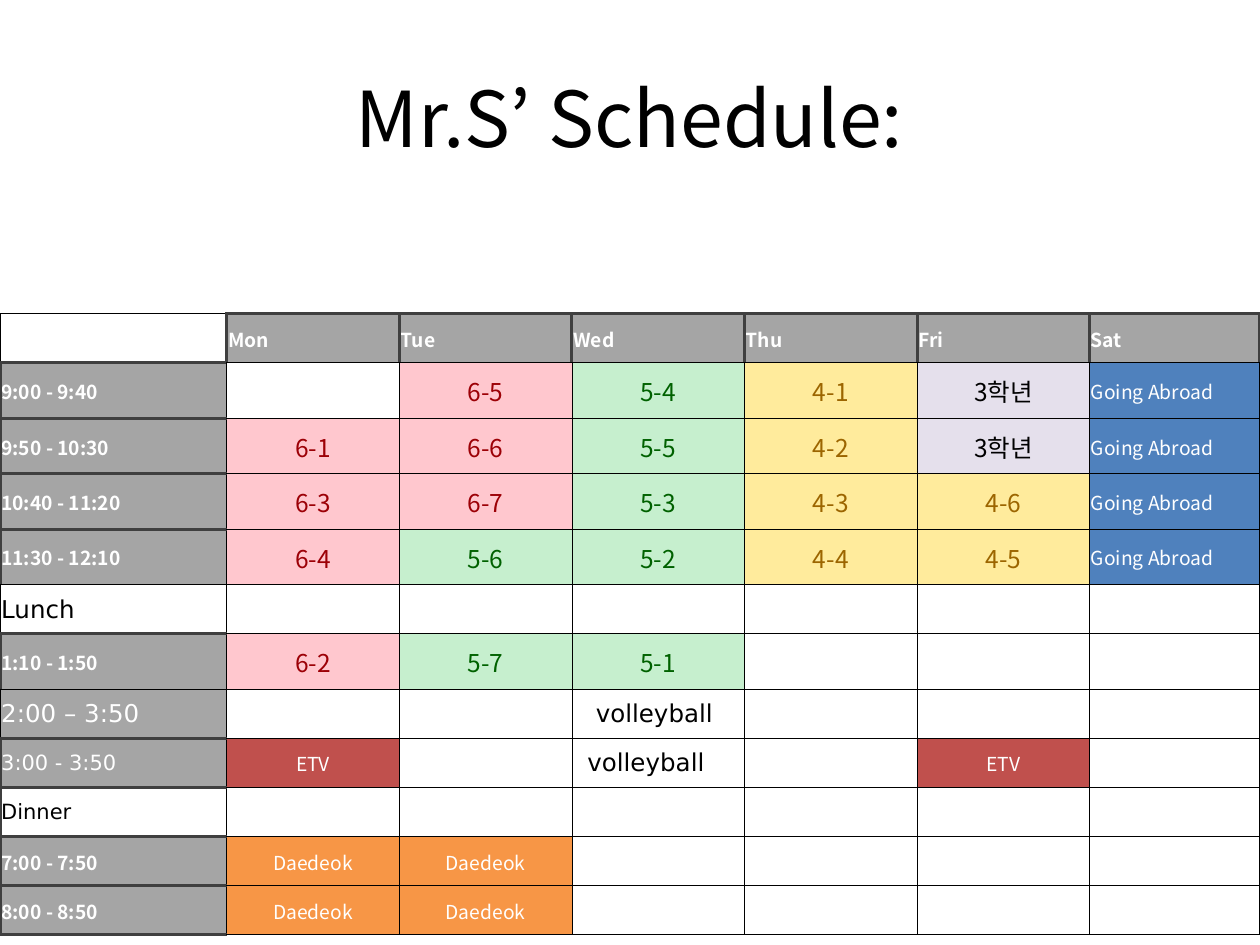
import pptx
import pptx.util
import pptx.dml.color
import pptx.enum.text
import lxml.etree
from pptx.oxml.ns import qn

Inches = pptx.util.Inches
Pt = pptx.util.Pt
RGB = pptx.dml.color.RGBColor
ALIGN = pptx.enum.text.PP_ALIGN
MIDDLE = pptx.enum.text.MSO_ANCHOR.MIDDLE

BLACK = RGB(0x00, 0x00, 0x00)
WHITE = RGB(0xFF, 0xFF, 0xFF)
GRAY = RGB(0xA5, 0xA5, 0xA5)
PALE = RGB(0xA6, 0xA6, 0xA6)
DARK = RGB(0x3F, 0x3F, 0x3F)
PINK = RGB(0xFF, 0xC7, 0xCE)
WINE = RGB(0x9C, 0x00, 0x06)
MINT = RGB(0xC6, 0xEF, 0xCE)
GREEN = RGB(0x00, 0x61, 0x00)
CREAM = RGB(0xFF, 0xEB, 0x9C)
BROWN = RGB(0x9C, 0x65, 0x00)
LILAC = RGB(0xE5, 0xE0, 0xEC)
BLUE = RGB(0x4F, 0x81, 0xBD)
RED = RGB(0xC0, 0x50, 0x4D)
ORANGE = RGB(0xF7, 0x96, 0x46)

NOTO = "Noto Sans CJK KR"
DEJAVU = "DejaVu Sans"

DAYS = ["Mon", "Tue", "Wed", "Thu", "Fri", "Sat"]
WIDTHS = [1.8] + [1.37] * 5 + [1.35]
LOW, HIGH = 0.39, 0.44

TIME = (11, NOTO, WHITE, True, GRAY)
HOURS = [
    ("9:00 - 9:40", TIME, "LTB", HIGH),
    ("9:50 - 10:30", TIME, "LTB", HIGH),
    ("10:40 - 11:20", TIME, "LTB", HIGH),
    ("11:30 - 12:10", TIME, "LT", HIGH),
    ("Lunch", (14, DEJAVU, BLACK, False, None), "B", LOW),
    ("1:10 - 1:50", TIME, "LT", HIGH),
    ("2:00 – 3:50", (14, DEJAVU, WHITE, False, PALE), "B", LOW),
    ("3:00 - 3:50", (12, DEJAVU, WHITE, False, GRAY), "LTB", LOW),
    ("Dinner", (12, DEJAVU, BLACK, False, WHITE), "LTB", LOW),
    ("7:00 - 7:50", TIME, "LTB", LOW),
    ("8:00 - 8:50", TIME, "LTB", LOW),
]
PLANS = [
    ["", "6-5", "5-4", "4-1", "3학년", "Going Abroad"],
    ["6-1", "6-6", "5-5", "4-2", "3학년", "Going Abroad"],
    ["6-3", "6-7", "5-3", "4-3", "4-6", "Going Abroad"],
    ["6-4", "5-6", "5-2", "4-4", "4-5", "Going Abroad"],
    [],
    ["6-2", "5-7", "5-1"],
    ["", "", "volleyball "],
    ["ETV", "", "volleyball　", "", "ETV"],
    [],
    ["Daedeok", "Daedeok"],
    ["Daedeok", "Daedeok"],
]
LOOKS = {
    "6": (14, NOTO, WINE, False, PINK),
    "5": (14, NOTO, GREEN, False, MINT),
    "4": (14, NOTO, BROWN, False, CREAM),
    "3": (14, NOTO, BLACK, False, LILAC),
    "G": (11, NOTO, WHITE, False, BLUE),
    "v": (14, DEJAVU, BLACK, False, None),
    "E": (11, NOTO, WHITE, False, RED),
    "D": (11, NOTO, WHITE, False, ORANGE),
}
PLAIN = (11, NOTO, BLACK, False, None)


def write(frame, text, size, face, color, bold, align):
    para = frame.paragraphs[0]
    para.text = text
    para.alignment = align
    for run in para.runs:
        font = run.font
        font.size = Pt(size)
        font.bold = bold
        font.color.rgb = color
        font.name = face
        east = lxml.etree.SubElement(font._element, qn("a:ea"))
        east.set("typeface", face)


def edge(cell, thick):
    props = cell._tc.get_or_add_tcPr()
    for side in "LRTB":
        width, color = (2, DARK) if side in thick else (0.5, BLACK)
        line = lxml.etree.SubElement(props, qn("a:ln" + side), w=str(Pt(width)))
        fill = lxml.etree.SubElement(line, qn("a:solidFill"))
        lxml.etree.SubElement(fill, qn("a:srgbClr"), val=str(color))


def fill_cell(cell, text, look, thick="", align=ALIGN.LEFT):
    size, face, color, bold, back = look
    cell.margin_left = cell.margin_right = cell.margin_top = Inches(0.01)
    cell.margin_bottom = 0
    cell.vertical_anchor = MIDDLE
    edge(cell, thick)
    if back is None:
        cell.fill.background()
    else:
        cell.fill.solid()
        cell.fill.fore_color.rgb = back
    write(cell.text_frame, text, size, face, color, bold, align)


def add_title(slide):
    box = slide.shapes.add_textbox(Inches(0.5), Inches(0.3), Inches(9), Inches(1.25))
    frame = box.text_frame
    frame.word_wrap = True
    frame.vertical_anchor = MIDDLE
    write(frame, "Mr.S’ Schedule:", 44, NOTO, BLACK, False, ALIGN.CENTER)


def add_week(slide):
    highs = [LOW] + [hour[3] for hour in HOURS]
    shape = slide.shapes.add_table(
        len(highs), len(WIDTHS), 0, Inches(2.49), Inches(10), Inches(sum(highs)))
    table = shape.table
    table.first_row = table.horz_banding = False
    for col, width in zip(table.columns, WIDTHS):
        col.width = Inches(width)
    for row, high in zip(table.rows, highs):
        row.height = Inches(high)

    fill_cell(table.cell(0, 0), "", PLAIN, "RB")
    for col, day in enumerate(DAYS, 1):
        fill_cell(table.cell(0, col), day, TIME, "LTR")
    for row, (hour, plan) in enumerate(zip(HOURS, PLANS), 1):
        label, look, thick, _ = hour
        fill_cell(table.cell(row, 0), label, look, thick)
        blank = PLAIN[:4] + (WHITE if label == "Dinner" else None,)
        for col in range(1, len(WIDTHS)):
            text = plan[col - 1] if col <= len(plan) else ""
            align = ALIGN.LEFT if col == len(DAYS) else ALIGN.CENTER
            fill_cell(table.cell(row, col), text, LOOKS.get(text[:1], blank), align=align)


def main():
    deck = pptx.Presentation()
    deck.slide_width = Inches(10)
    deck.slide_height = Inches(7.5)
    slide = deck.slides.add_slide(deck.slide_layouts[6])
    add_title(slide)
    add_week(slide)
    deck.save("out.pptx")


if __name__ == "__main__":
    main()
